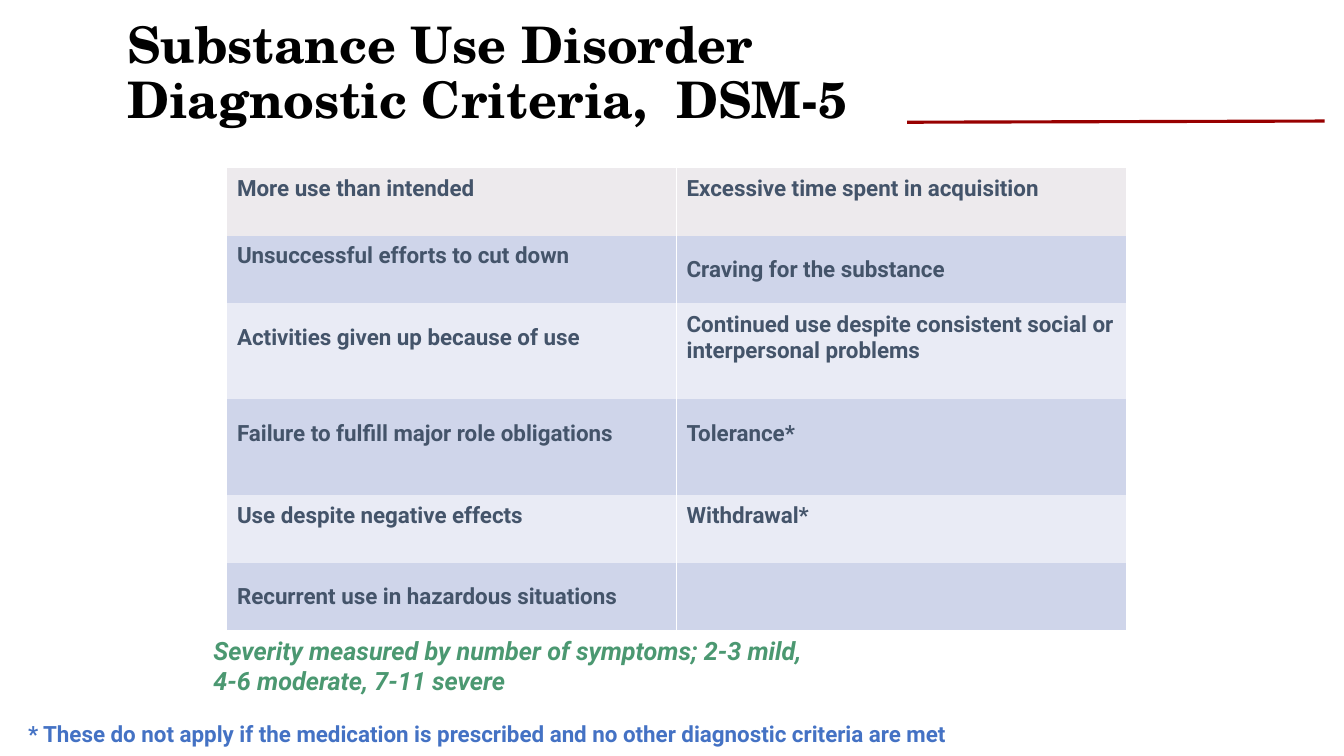
from lxml import etree
from pptx import Presentation
from pptx.dml.color import RGBColor
from pptx.enum.shapes import MSO_CONNECTOR
from pptx.enum.text import MSO_ANCHOR, PP_ALIGN
from pptx.oxml.ns import qn
from pptx.util import Cm, Pt

LEFT = PP_ALIGN.LEFT
TOP, MIDDLE, BOTTOM = MSO_ANCHOR.TOP, MSO_ANCHOR.MIDDLE, MSO_ANCHOR.BOTTOM
STRAIGHT = MSO_CONNECTOR.STRAIGHT
NO_STYLE = "{2D5ABB26-0587-4C30-8999-92F81FD0307C}"

COLORS = {
    "title": "000000", "rule": "980000", "criteria": "44546A",
    "severity": "4B9871", "footnote": "4472C4", "divider": "FFFFFF",
    "first": "EDEAED", "dark": "CFD5EA", "light": "E9EBF5",
}
FORMATS = {
    "title": {"name": "TeX Gyre Schola", "size": Pt(36), "bold": True},
    "criteria": {"name": "Roboto", "size": Pt(16), "bold": True},
    "severity": {"name": "Roboto", "size": Pt(18), "bold": True, "italic": True},
    "footnote": {"name": "Roboto", "size": Pt(16), "bold": True},
}
CRITERIA = [
    ("More use than intended", "Excessive time spent in acquisition"),
    ("Unsuccessful efforts to cut down", "Craving for the substance"),
    ("Activities given up because of use",
     "Continued use despite consistent social or interpersonal problems"),
    ("Failure to fulfill major role obligations", "Tolerance*"),
    ("Use despite negative effects", "Withdrawal*"),
    ("Recurrent use in hazardous situations", ""),
]
ROW_HEIGHTS = [1.7, 1.7, 2.42, 2.42, 1.7, 1.7]
CENTERED_CELLS = {(1, 1), (5, 0), (5, 1)}


def write(tf, text, kind):
    """Fill a text frame with one formatted paragraph."""
    tf.word_wrap = True
    p = tf.paragraphs[0]
    p.text = text
    p.alignment = LEFT
    for r in p.runs:
        for key, value in FORMATS[kind].items():
            setattr(r.font, key, value)
        r.font.color.rgb = RGBColor.from_string(COLORS[kind])
    return p


def add_title(s, text, x, y, w, h):
    """Place the slide title, growing upward from its base."""
    sp = s.shapes.title
    sp.left, sp.top, sp.width, sp.height = Cm(x), Cm(y), Cm(w), Cm(h)
    tf = sp.text_frame
    write(tf, text, "title").line_spacing = 0.9
    tf.vertical_anchor = BOTTOM
    tf.margin_bottom = Cm(0.41)


def add_rule(s, x1, y1, x2, y2):
    """Draw the red line beside the title."""
    line = s.shapes.add_connector(STRAIGHT, Cm(x1), Cm(y1), Cm(x2), Cm(y2))
    line.line.color.rgb = RGBColor.from_string(COLORS["rule"])
    line.line.width = Pt(2.25)
    etree.SubElement(line._element.spPr, qn("a:effectLst"))


def add_divider(cell, side):
    """Give one side of a cell a thin white border."""
    ln = etree.Element(qn(f"a:{side}"), w=str(Pt(1)))
    fill = etree.SubElement(ln, qn("a:solidFill"))
    etree.SubElement(fill, qn("a:srgbClr"), val=COLORS["divider"])
    cell._tc.get_or_add_tcPr().insert(0, ln)


def add_criteria(s, x, y, w):
    """Build the two-column table of criteria."""
    h = sum(ROW_HEIGHTS)
    table = s.shapes.add_table(len(CRITERIA), 2, Cm(x), Cm(y), Cm(w), Cm(h)).table
    table.first_row = table.horz_banding = False
    table._tbl.tblPr.find(qn("a:tableStyleId")).text = NO_STYLE
    for i, texts in enumerate(CRITERIA):
        table.rows[i].height = Cm(ROW_HEIGHTS[i])
        band = "first" if i == 0 else ("light", "dark")[i % 2]
        for j, text in enumerate(texts):
            cell = table.cell(i, j)
            write(cell.text_frame, text, "criteria")
            cell.vertical_anchor = MIDDLE
            if (i, j) not in CENTERED_CELLS:
                cell.margin_bottom = Cm(0.79)
            cell.fill.solid()
            cell.fill.fore_color.rgb = RGBColor.from_string(COLORS[band])
            add_divider(cell, ("lnR", "lnL")[j])


def add_note(s, text, kind, x, y, w, h):
    """Place a note below the table."""
    tf = s.shapes.add_textbox(Cm(x), Cm(y), Cm(w), Cm(h)).text_frame
    write(tf, text, kind)
    tf.vertical_anchor = TOP


def main():
    """Build and save the slide."""
    prs = Presentation()
    prs.slide_width, prs.slide_height = Cm(33.87), Cm(19.05)
    s = prs.slides.add_slide(prs.slide_layouts[5])
    add_title(s, "Substance Use Disorder Diagnostic Criteria,  DSM-5",
              2.95, 1.68, 21.72, 1.98)
    add_note(s, "Severity measured by number of symptoms; 2-3 mild,\v"
             "4-6 moderate, 7-11 severe", "severity", 5.13, 15.88, 24.77, 1.8)
    add_criteria(s, 5.72, 4.24, 22.66)
    add_note(s, "* These do not apply if the medication is prescribed "
             "and no other diagnostic criteria are met",
             "footnote", 0.46, 18.01, 28.35, 1.37)
    add_rule(s, 22.86, 3.08, 33.38, 3.05)
    prs.save("out.pptx")


if __name__ == "__main__":
    main()
